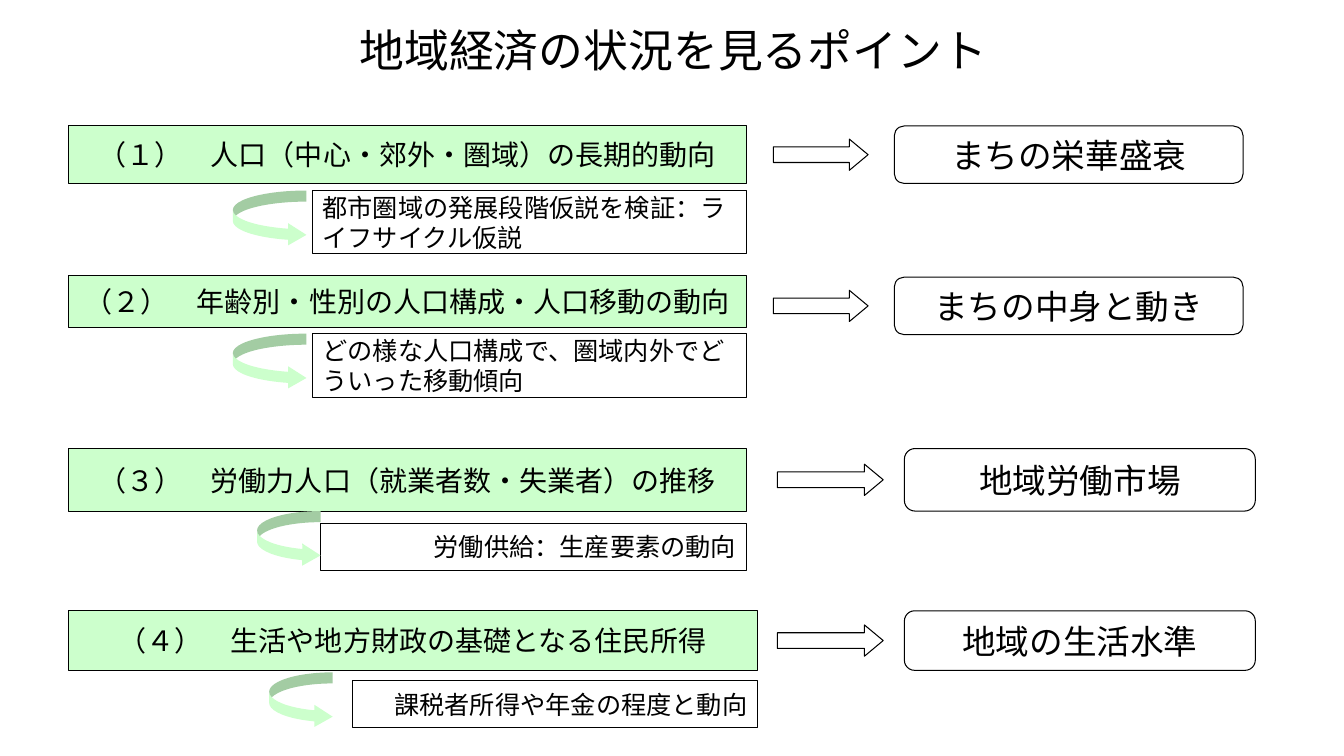
"""Build the slide on four points for reading a regional economy."""
from pptx import Presentation
from pptx.dml.color import RGBColor
from pptx.enum.shapes import MSO_SHAPE
from pptx.enum.text import MSO_ANCHOR, MSO_AUTO_SIZE, PP_ALIGN
from pptx.util import Inches, Pt

RECT, ROUND = MSO_SHAPE.RECTANGLE, MSO_SHAPE.ROUNDED_RECTANGLE
ARROW, CURVE = MSO_SHAPE.RIGHT_ARROW, MSO_SHAPE.CURVED_RIGHT_ARROW
LEFT, CENTER, RIGHT = PP_ALIGN.LEFT, PP_ALIGN.CENTER, PP_ALIGN.RIGHT
MIDDLE, FIXED = MSO_ANCHOR.MIDDLE, MSO_AUTO_SIZE.NONE

TITLE = "地域経済の状況を見るポイント"
ROWS = [
    {"topic": "（１）　人口（中心・郊外・圏域）の長期的動向",
     "note": "都市圏域の発展段階仮説を検証：ライフサイクル仮説",
     "goal": "まちの栄華盛衰", "top": 1.25, "high": 0.57, "right": 7.4,
     "note_box": (3.1, 1.89, 0.63), "align": LEFT, "curve": (2.31, 1.89, 0.73),
     "goal_box": (8.87, 1.25, 3.46, 0.57), "arrow": (7.67, 0.94)},
    {"topic": "（２）　年齢別・性別の人口構成・人口移動の動向",
     "note": "どの様な人口構成で、圏域内外でどういった移動傾向",
     "goal": "まちの中身と動き", "top": 2.73, "high": 0.52, "right": 7.4,
     "note_box": (3.1, 3.31, 0.63), "align": LEFT, "curve": (2.31, 3.31, 0.73),
     "goal_box": (8.87, 2.75, 3.46, 0.57), "arrow": (7.67, 0.94)},
    {"topic": "（３）　労働力人口（就業者数・失業者）の推移",
     "note": "労働供給：生産要素の動向",
     "goal": "地域労働市場", "top": 4.45, "high": 0.62, "right": 7.4,
     "note_box": (3.18, 5.19, 0.47), "align": RIGHT, "curve": (2.55, 5.07, 0.63),
     "goal_box": (8.97, 4.45, 3.48, 0.62), "arrow": (7.71, 1.05)},
    {"topic": "（４）　生活や地方財政の基礎となる住民所得",
     "note": "課税者所得や年金の程度と動向",
     "goal": "地域の生活水準", "top": 6.06, "high": 0.59, "right": 7.51,
     "note_box": (3.5, 6.75, 0.47), "align": RIGHT, "curve": (2.67, 6.67, 0.63),
     "goal_box": (8.97, 6.06, 3.48, 0.59), "arrow": (7.71, 1.05)},
]
THEME = {"font": "Calibri", "ink": RGBColor(0, 0, 0),
         "green": RGBColor(0xCC, 0xFF, 0xCC), "line": Pt(0.75),
         "title": Pt(32), "topic": Pt(20), "note": Pt(18), "goal": Pt(24)}
EDGE = 0.68
ARROW_HIGH, CURVE_HIGH = 0.31, 0.55


def write(shape, text, size, align=CENTER, wrap=False):
    """Put one styled run in a shape."""
    frame = shape.text_frame
    frame.auto_size = FIXED
    frame.word_wrap = wrap
    frame.vertical_anchor = MIDDLE
    para = frame.paragraphs[0]
    para.alignment = align
    run = para.add_run()
    run.text = text
    run.font.name = THEME["font"]
    run.font.size = size
    run.font.color.rgb = THEME["ink"]


def draw(slide, kind, box, fill=None, line=True, adjust=()):
    """Add a flat preset shape."""
    shape = slide.shapes.add_shape(kind, *map(Inches, box))
    shape.shadow.inherit = False
    for index, value in enumerate(adjust):
        shape.adjustments[index] = value
    if fill is None:
        shape.fill.background()
    else:
        shape.fill.solid()
        shape.fill.fore_color.rgb = fill
    if line:
        shape.line.color.rgb = THEME["ink"]
        shape.line.width = THEME["line"]
    else:
        shape.line.fill.background()
    return shape


def add_row(slide, row):
    """Draw a topic with its note, curve, arrow and goal."""
    topic = draw(slide, RECT, (EDGE, row["top"], row["right"] - EDGE, row["high"]),
                 THEME["green"])
    write(topic, row["topic"], THEME["topic"])

    left, top, high = row["note_box"]
    note = draw(slide, RECT, (left, top, row["right"] - left, high))
    write(note, row["note"], THEME["note"], row["align"], True)
    draw(slide, CURVE, (*row["curve"], CURVE_HIGH), THEME["green"], False,
         (0.2, 0.4, 0.33))

    goal = draw(slide, ROUND, row["goal_box"], adjust=(0.17,))
    write(goal, row["goal"], THEME["goal"])
    left, wide = row["arrow"]
    top = row["goal_box"][1] + (row["goal_box"][3] - ARROW_HIGH) / 2
    draw(slide, ARROW, (left, top, wide, ARROW_HIGH),
         adjust=(0.5, 0.6))


def main():
    """Build and save the deck."""
    deck = Presentation()
    deck.slide_width, deck.slide_height = Inches(13.33), Inches(7.5)
    slide = deck.slides.add_slide(deck.slide_layouts[5])
    title = slide.shapes.title
    title.left, title.top = Inches(EDGE), Inches(0.07)
    title.width, title.height = Inches(12), Inches(0.85)
    write(title, TITLE, THEME["title"], wrap=True)
    for row in ROWS:
        add_row(slide, row)
    deck.save("out.pptx")


if __name__ == "__main__":
    main()
